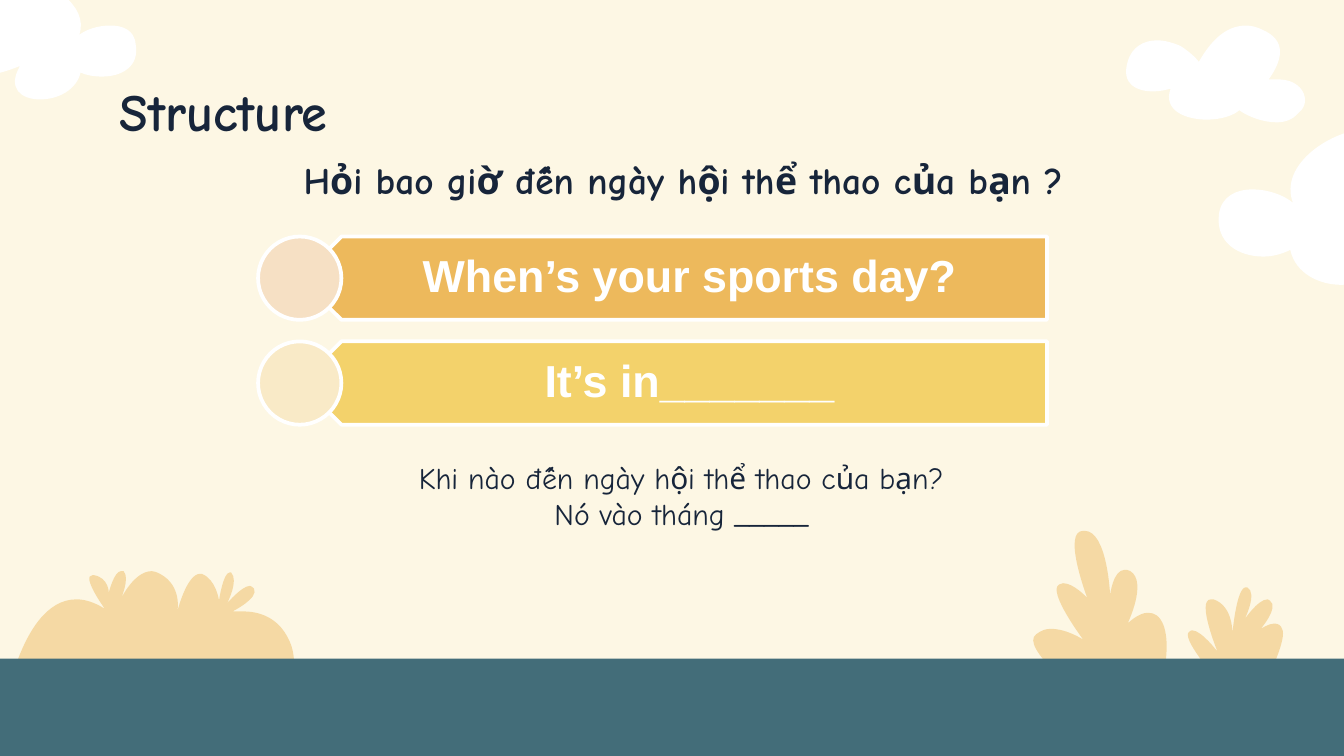
from dataclasses import dataclass

from lxml import etree
from pptx import Presentation
from pptx import util as u
from pptx.dml.color import RGBColor
from pptx.enum import shapes, text
from pptx.oxml.ns import qn

COLUMNS = 1000
WIDTH = u.Inches(10)
HEIGHT = WIDTH * 9 // 16
CELL = WIDTH // COLUMNS
COLORS = {
    "cream": "FDF7E4", "ink": "17253A", "white": "FFFFFF", "ground": "436D79",
    "orange": "EDB95C", "yellow": "F3D26B", "peach": "F6E0C4", "vanilla": "F9EAC7",
}


@dataclass(frozen=True)
class Box:
    left: int
    top: int
    width: int
    height: int

    def emu(self) -> list[int]:
        return [value * CELL for value in (self.left, self.top, self.width, self.height)]


@dataclass(frozen=True)
class Outline:
    color: str
    start: tuple[int, int]
    segments: tuple[tuple[int, ...], ...]
    opacity: int = 100


@dataclass(frozen=True)
class Banner:
    wording: str
    color: str
    dot_color: str


@dataclass(frozen=True)
class TextStyle:
    font: str
    size: int
    color: str
    bold: bool = False
    align: text.PP_ALIGN = text.PP_ALIGN.CENTER
    margins: tuple[int, int, int, int] = (10, 0, 10, 0)
    anchor: text.MSO_ANCHOR = text.MSO_ANCHOR.TOP
    indent: tuple[int, int] = (0, 0)
    line_spacing: float = 1.0


SMALL_PLANT = Outline("orange", (927, 437), (
    (920, 437, 917, 472, 917, 472), (917, 472, 918, 451, 903, 446),
    (902, 446, 901, 446, 901, 446), (890, 446, 906, 485, 906, 485),
    (906, 485, 894, 469, 887, 469), (886, 469, 885, 470, 885, 470),
    (878, 474, 905, 505, 905, 505), (943, 505),
    (943, 505, 958, 475, 954, 468), (953, 465, 951, 464, 948, 464),
    (944, 464, 938, 468, 938, 468), (938, 468, 952, 452, 945, 447),
    (944, 446, 943, 446, 943, 446), (936, 446, 926, 461, 926, 461),
    (926, 461, 936, 441, 928, 437), (928, 437, 927, 437, 927, 437)), 47)
TALL_PLANT = Outline("orange", (806, 395), (
    (790, 395, 809, 445, 809, 445), (809, 445, 799, 434, 791, 434),
    (790, 434, 789, 435, 788, 435), (779, 440, 806, 476, 806, 476),
    (806, 476, 794, 468, 782, 468), (778, 468, 775, 469, 771, 472),
    (758, 481, 806, 519, 806, 519), (860, 521),
    (860, 521, 873, 488, 866, 466), (863, 458, 859, 456, 854, 456),
    (847, 456, 839, 464, 839, 464), (839, 464, 854, 433, 841, 425),
    (839, 424, 838, 424, 837, 424), (828, 424, 826, 443, 826, 443),
    (826, 443, 824, 395, 807, 395), (807, 395, 806, 395, 806, 395)), 47)
BUSH = Outline("orange", (90, 425), (
    (90, 425, 91, 425, 92, 425), (97, 430, 90, 446, 89, 448), (89, 448),
    (90, 445, 100, 425, 113, 425), (115, 425, 117, 426, 119, 427),
    (136, 436, 132, 455, 132, 455), (132, 455, 139, 427, 149, 427),
    (149, 427, 150, 427, 150, 427), (161, 431, 163, 447, 163, 447),
    (163, 447, 166, 426, 171, 426), (171, 426, 172, 426, 172, 426),
    (178, 432, 169, 449, 169, 449), (169, 449, 180, 436, 186, 436),
    (187, 436, 188, 437, 189, 438), (193, 445, 173, 455, 173, 455),
    (173, 455, 176, 455, 181, 455), (191, 455, 209, 458, 217, 481),
    (227, 513, 198, 595, 198, 595), (0, 545),
    (0, 545, 12, 446, 57, 446), (63, 446, 70, 448, 78, 453),
    (78, 453, 60, 428, 69, 428), (69, 428, 69, 428, 70, 428),
    (81, 430, 81, 441, 81, 441), (81, 441, 85, 425, 90, 425)), 47)
LEFT_CLOUD = Outline("white", (15, -16), (
    (14, -16, 14, -16, 13, -16), (-10, -15, -16, 9, -4, 24),
    (-9, 21, -15, 19, -21, 19), (-25, 19, -30, 20, -34, 22),
    (-42, 26, -53, 36, -50, 46), (-46, 55, -36, 58, -25, 58),
    (-11, 58, 6, 53, 15, 49), (15, 49), (5, 66, 16, 74, 30, 74),
    (43, 74, 57, 67, 60, 54), (64, 56, 70, 57, 76, 57),
    (90, 57, 104, 50, 101, 33), (100, 22, 91, 19, 82, 19),
    (73, 19, 64, 22, 59, 26), (67, 4, 35, -16, 15, -16)))
UPPER_CLOUD = Outline("white", (927, 19), (
    (911, 19, 900, 32, 892, 46), (889, 42, 883, 37, 878, 34),
    (873, 32, 867, 30, 861, 30), (851, 30, 842, 35, 839, 46),
    (834, 63, 846, 68, 858, 68), (863, 68, 867, 67, 871, 66), (871, 66),
    (865, 82, 882, 89, 898, 89), (908, 89, 918, 86, 922, 82),
    (929, 87, 940, 91, 950, 91), (956, 91, 962, 89, 966, 84),
    (973, 79, 972, 70, 967, 65), (962, 60, 956, 59, 949, 59),
    (948, 59, 946, 59, 944, 59), (954, 45, 958, 30, 939, 22),
    (935, 20, 931, 19, 927, 19)))
RIGHT_CLOUD = Outline("white", (1018, 96), (
    (992, 96, 951, 122, 962, 151), (955, 145, 943, 141, 932, 141),
    (920, 141, 909, 146, 907, 159), (904, 181, 922, 191, 940, 191),
    (947, 191, 954, 189, 960, 186), (964, 204, 982, 212, 998, 212),
    (1016, 212, 1031, 202, 1018, 181), (1018, 181),
    (1029, 185, 1051, 192, 1070, 192),
    (1084, 192, 1096, 188, 1101, 177), (1106, 163, 1091, 151, 1081, 146),
    (1075, 143, 1070, 142, 1065, 142), (1057, 142, 1049, 144, 1042, 149),
    (1058, 128, 1049, 98, 1020, 96), (1020, 96, 1019, 96, 1018, 96)))

BANNERS = (
    Banner("When’s your sports day?", "orange", "peach"),
    Banner("It’s in_______", "yellow", "vanilla"),
)
BANNER_TOP, BANNER_PITCH, BANNER_HEIGHT = 176, 78, 62

HANGING = (50, -36)
TITLE = TextStyle("Comic Neue", 28, "ink", True, text.PP_ALIGN.LEFT, (10, 10, 10, 10))
QUESTION = TextStyle("Comic Neue", 20, "ink", True, indent=HANGING)
TRANSLATION = TextStyle("Comic Neue", 16, "ink", indent=HANGING)
BANNER_TEXT = TextStyle("Arial", 24, "white", True, margins=(27, 10, 19, 10),
                        anchor=text.MSO_ANCHOR.MIDDLE, line_spacing=0.9)


def rgb(name: str) -> RGBColor:
    return RGBColor.from_string(COLORS[name])


def paint(shape, color: str, outlined: bool = False) -> None:
    shape.shadow.inherit = False
    shape.fill.solid()
    shape.fill.fore_color.rgb = rgb(color)
    if outlined:
        shape.line.color.rgb = rgb("white")
        shape.line.width = u.Pt(2)
    else:
        shape.line.fill.background()


def draw_shape(slide, kind: shapes.MSO_SHAPE, box: Box, color: str, outlined: bool = False):
    shape = slide.shapes.add_shape(kind, *box.emu())
    paint(shape, color, outlined)
    return shape


def bend(shape, segments: tuple[tuple[int, ...], ...]) -> None:
    lines = iter(list(shape.element.iter(qn("a:lnTo"))))
    for segment in segments:
        line = next(lines)
        if len(segment) == 6:
            curve = etree.Element(qn("a:cubicBezTo"))
            line.addprevious(curve)
            for control in (line, next(lines), next(lines)):
                curve.append(control[0])
                control.getparent().remove(control)


def draw_outline(slide, outline: Outline) -> None:
    points = [(segment[i], segment[i + 1])
              for segment in outline.segments for i in range(0, len(segment), 2)]
    builder = slide.shapes.build_freeform(*outline.start, scale=CELL)
    builder.add_line_segments(points, close=True)
    shape = builder.convert_to_shape()
    bend(shape, outline.segments)
    paint(shape, outline.color)
    if outline.opacity < 100:
        color = shape.element.spPr.find(qn("a:solidFill")).find(qn("a:srgbClr"))
        etree.SubElement(color, qn("a:alpha"), val=str(outline.opacity * 1000))


def write(shape, box: Box, lines: tuple[str, ...], style: TextStyle) -> None:
    shape.left, shape.top, shape.width, shape.height = box.emu()
    frame = shape.text_frame
    frame.word_wrap = True
    frame.auto_size = text.MSO_AUTO_SIZE.NONE
    frame.vertical_anchor = style.anchor
    frame.margin_left, frame.margin_top, frame.margin_right, frame.margin_bottom = (
        margin * CELL for margin in style.margins)
    frame.text = "\n".join(lines)
    for paragraph in frame.paragraphs:
        paragraph.alignment = style.align
        paragraph.line_spacing = style.line_spacing
        paragraph.font.name = style.font
        paragraph.font.size = u.Pt(style.size)
        paragraph.font.bold = style.bold
        paragraph.font.color.rgb = rgb(style.color)
        properties = paragraph._p.get_or_add_pPr()
        for key, length in zip(("marL", "indent"), style.indent):
            properties.set(key, str(length * CELL))


def add_text(slide, box: Box, lines: tuple[str, ...], style: TextStyle) -> None:
    write(slide.shapes.add_textbox(*box.emu()), box, lines, style)


def draw_banner(slide, banner: Banner, row: int) -> None:
    top = BANNER_TOP + row * BANNER_PITCH
    plate = draw_shape(slide, shapes.MSO_SHAPE.PENTAGON,
                       Box(223, top, 556, BANNER_HEIGHT), banner.color, True)
    plate.rotation = 180
    add_text(slide, Box(239, top, 540, BANNER_HEIGHT), (banner.wording,), BANNER_TEXT)
    draw_shape(slide, shapes.MSO_SHAPE.OVAL,
               Box(192, top, BANNER_HEIGHT, BANNER_HEIGHT), banner.dot_color, True)


def main() -> None:
    presentation = Presentation()
    presentation.slide_width, presentation.slide_height = WIDTH, HEIGHT
    slide = presentation.slides.add_slide(presentation.slide_layouts.get_by_name("Title Only"))
    slide.background.fill.solid()
    slide.background.fill.fore_color.rgb = rgb("cream")
    for plant in (SMALL_PLANT, TALL_PLANT, BUSH):
        draw_outline(slide, plant)
    draw_shape(slide, shapes.MSO_SHAPE.RECTANGLE, Box(-3, 490, 1006, 105), "ground")
    for cloud in (LEFT_CLOUD, UPPER_CLOUD, RIGHT_CLOUD):
        draw_outline(slide, cloud)
    title = slide.shapes.title
    title.element.getparent().append(title.element)
    write(title, Box(79, 49, 843, 63), ("Structure",), TITLE)
    add_text(slide, Box(133, 117, 737, 69),
             ("Hỏi bao giờ đến ngày hội thể thao của bạn ?",), QUESTION)
    for row, banner in enumerate(BANNERS):
        draw_banner(slide, banner, row)
    add_text(slide, Box(230, 342, 540, 110),
             ("Khi nào đến ngày hội thể thao của bạn?", "Nó vào tháng _____"), TRANSLATION)
    presentation.save("out.pptx")


if __name__ == "__main__":
    main()
